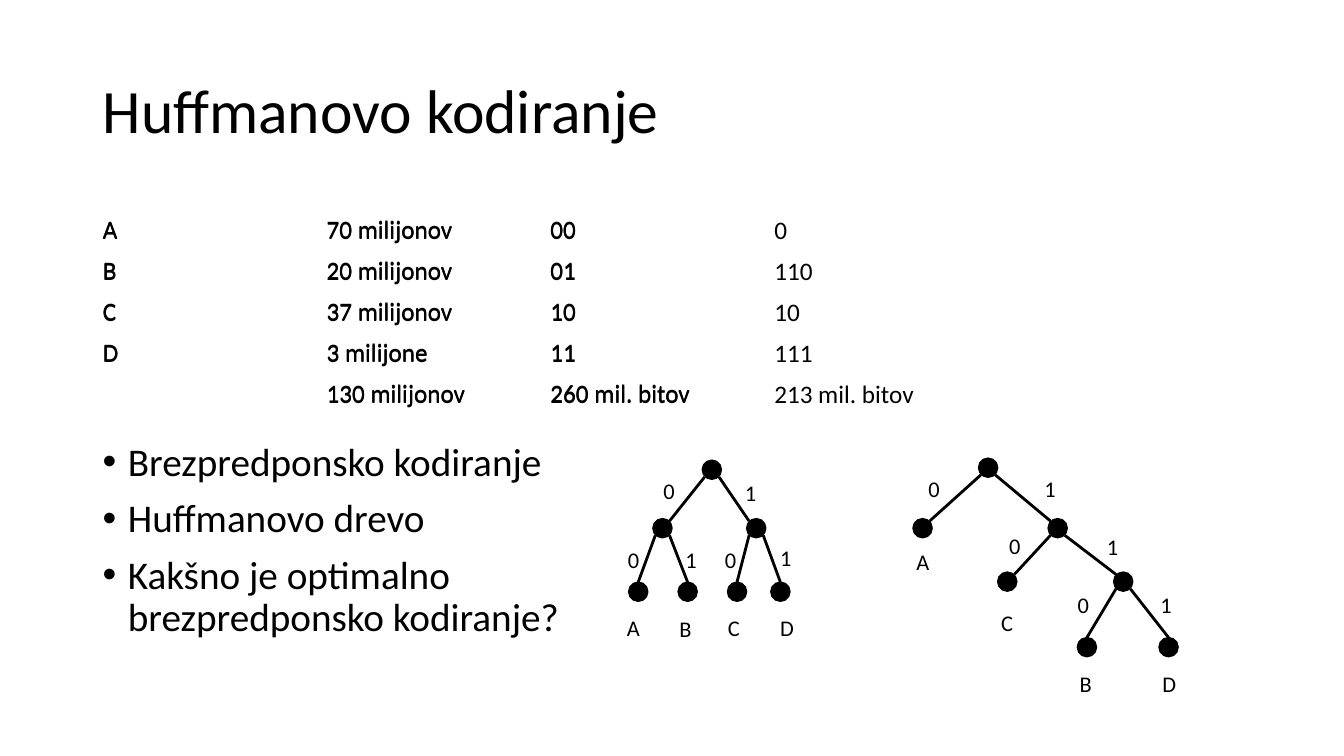
from lxml.etree import SubElement
from pptx import Presentation
from pptx.dml.color import RGBColor
from pptx.enum.shapes import MSO_CONNECTOR, MSO_SHAPE
from pptx.enum.text import MSO_ANCHOR
from pptx.oxml.ns import qn
from pptx.util import Inches, Pt

FONT = "Calibri"
BLACK = "000000"
DOT = 0.19
RIM = 0.07  # offset from a dot's centre to its edge on the diagonal

ROWS = [
    ("A", "70 milijonov", "00", "0"),
    ("B", "20 milijonov", "01", "110"),
    ("C", "37 milijonov", "10", "10"),
    ("D", "3 milijone", "11", "111"),
    ("", "130 milijonov", "260 mil. bitov", "213 mil. bitov"),
]
POINTS = [
    "Brezpredponsko kodiranje",
    "Huffmanovo drevo",
    "Kakšno je optimalno brezpredponsko kodiranje?",
]

# Node: centre x, y, parent index, corner of the bit, leaf letter, its corner
FIXED = [
    (7.06, 4.66, None, None, "", None),
    (6.57, 5.24, 0, (6.48, 4.68), "", None),
    (7.5, 5.24, 0, (7.29, 4.7), "", None),
    (6.33, 5.87, 1, (6.13, 5.37), "A", (6.12, 6.04)),
    (6.82, 5.87, 1, (6.7, 5.37), "B", (6.64, 6.05)),
    (7.31, 5.87, 2, (7.09, 5.37), "C", (7.12, 6.04)),
    (7.74, 5.87, 2, (7.64, 5.35), "D", (7.64, 6.04)),
]
HUFFMAN = [
    (9.8, 4.64, None, None, "", None),
    (9.15, 5.24, 0, (9.11, 4.66), "A", (8.99, 5.39)),
    (10.49, 5.24, 0, (10.26, 4.66), "", None),
    (9.99, 5.77, 2, (9.91, 5.23), "C", (9.83, 5.99)),
    (11.14, 5.77, 2, (10.88, 5.24), "", None),
    (10.78, 6.42, 4, (10.59, 5.82), "B", (10.61, 6.6)),
    (11.59, 6.42, 4, (11.41, 5.82), "D", (11.43, 6.6)),
]


def color(code):
    return RGBColor.from_string(code)


def style(par, size):
    par.font.name = FONT
    par.font.size = Pt(size)
    par.font.color.rgb = color(BLACK)


def add_text(slide, box, lines, size, wrap=True):
    frame = slide.shapes.add_textbox(*map(Inches, box)).text_frame
    frame.word_wrap = wrap
    frame.text = "\n".join(lines)
    for par in frame.paragraphs:
        style(par, size)
    return frame


def add_title(slide):
    frame = add_text(slide, (0.92, 0.4, 11.5, 1.45), ["Huffmanovo kodiranje"], 44)
    frame.vertical_anchor = MSO_ANCHOR.MIDDLE
    frame.paragraphs[0].line_spacing = 0.9


def add_bullets(slide):
    frame = add_text(slide, (0.92, 4.34, 4.78, 2.61), POINTS, 28)
    for par in frame.paragraphs:
        par.line_spacing = 0.9
        par.space_before = Pt(10)
        props = par._p.get_or_add_pPr()
        props.set("marL", str(Inches(0.25)))
        props.set("indent", str(Inches(-0.25)))
        SubElement(props, qn("a:buFont"), typeface="Arial")
        SubElement(props, qn("a:buChar"), char="•")


def add_codes(slide, top, cols):
    """Add the code table with its first cols columns."""
    box = map(Inches, (0.92, top, 2.22 * cols, 2.03))
    table = slide.shapes.add_table(len(ROWS), cols, *box).table
    table.first_row = False
    table.horz_banding = False
    for r, row in enumerate(ROWS):
        for c, word in enumerate(row[:cols]):
            cell = table.cell(r, c)
            cell.fill.background()
            cell.text = word
            style(cell.text_frame.paragraphs[0], 18)


def add_mark(slide, spot, word):
    add_text(slide, (*spot, 0.31, 0.37), [word], 16, wrap=False)


def add_dot(slide, x, y):
    box = map(Inches, (x - DOT / 2, y - DOT / 2, DOT, DOT))
    dot = slide.shapes.add_shape(MSO_SHAPE.OVAL, *box)
    dot.shadow.inherit = False
    dot.fill.solid()
    dot.fill.fore_color.rgb = color(BLACK)
    dot.line.color.rgb = color(BLACK)
    dot.line.width = Pt(1)


def add_edge(slide, start, end):
    line = slide.shapes.add_connector(
        MSO_CONNECTOR.STRAIGHT, *map(Inches, (*start, *end)))
    line.line.color.rgb = color(BLACK)
    line.line.width = Pt(2)
    SubElement(line._element.spPr, qn("a:effectLst"))


def add_tree(slide, nodes):
    """Draw a code tree; edges enter the lowest row from straight above."""
    low = max(node[1] for node in nodes)
    for x, y, parent, spot, leaf, below in nodes:
        add_dot(slide, x, y)
        if parent is not None:
            px, py = nodes[parent][:2]
            side = -1 if x < px else 1
            end = (x, y - DOT / 2) if y == low else (x - side * RIM, y - RIM)
            add_edge(slide, (px + side * RIM, py + RIM), end)
            add_mark(slide, spot, "0" if side < 0 else "1")
        if leaf:
            add_mark(slide, below, leaf)


def main():
    deck = Presentation()
    deck.slide_width = Inches(13.33)
    deck.slide_height = Inches(7.5)
    slide = deck.slides.add_slide(deck.slide_layouts[6])
    add_title(slide)
    add_bullets(slide)
    add_codes(slide, 2.08, 3)
    add_tree(slide, FIXED)
    add_tree(slide, HUFFMAN)
    add_codes(slide, 2.09, 4)
    deck.save("out.pptx")


if __name__ == "__main__":
    main()
